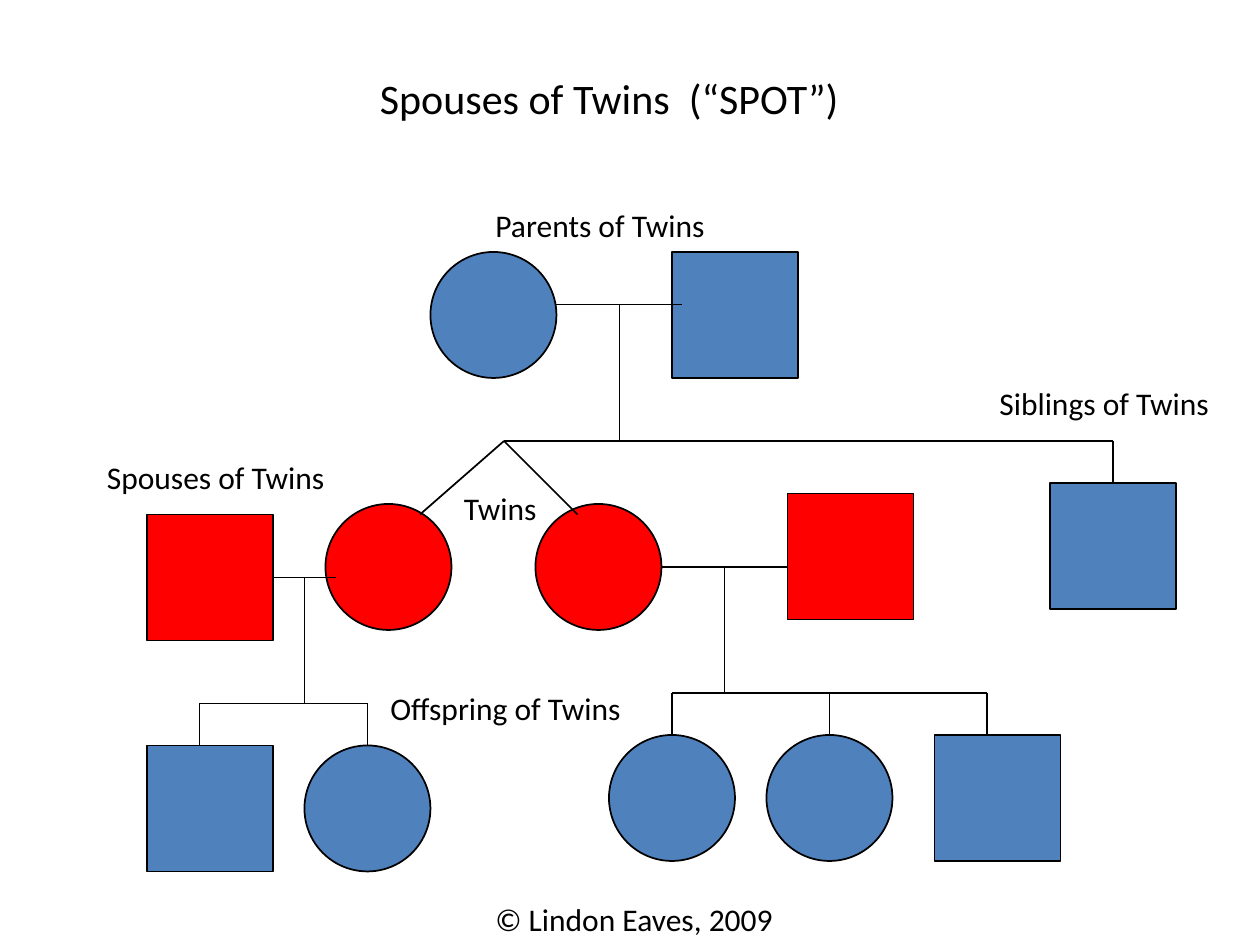
import pptx
import pptx.util
import pptx.dml.color
import pptx.enum.shapes
import pptx.enum.text
import pptx.oxml.ns
import lxml.etree

Pt = pptx.util.Pt
KIND = pptx.enum.shapes.MSO_SHAPE
SIZE = 72
BLACK, BLUE, RED = "000000", "4F81BD", "FF0000"

WOMEN = [
    (246, 144, BLUE), (186, 288, RED), (306, 288, RED),
    (174, 426, BLUE), (348, 420, BLUE), (438, 420, BLUE),
]
MEN = [
    (384, 144, BLUE), (84, 294, RED), (450, 282, RED),
    (600, 276, BLUE), (84, 426, BLUE), (534, 420, BLUE),
]
COUPLES = [(318, 390, 174), (156, 192, 330), (378, 450, 324)]
STEMS = [(354, 174, 252), (174, 330, 402), (414, 324, 396)]
BROODS = [
    (288, 636, 252, [636], 276),
    (114, 210, 402, [114, 210], 426),
    (384, 564, 396, [384, 474, 564], 420),
]
TWINS = [240, 330]
LABELS = [
    ("Twins", 258, 276, 56),
    ("Parents of Twins", 276, 114, 135),
    ("Offspring of Twins", 216, 390, 148),
    ("Siblings of Twins", 564, 216, 135),
    ("Spouses of Twins", 54, 258, 140),
    ("© Lindon Eaves, 2009", 276, 511, 175),
]


def paint(color, code):
    color.rgb = pptx.dml.color.RGBColor.from_string(code)


def add_person(slide, kind, left, top, fill):
    shape = slide.shapes.add_shape(kind, Pt(left), Pt(top), Pt(SIZE), Pt(SIZE))
    shape.shadow.inherit = False
    shape.fill.solid()
    paint(shape.fill.fore_color, fill)
    paint(shape.line.color, BLACK)
    shape.line.width = Pt(1)


def add_line(slide, x1, y1, x2, y2):
    line = slide.shapes.add_connector(
        pptx.enum.shapes.MSO_CONNECTOR.STRAIGHT, Pt(x1), Pt(y1), Pt(x2), Pt(y2))
    paint(line.line.color, BLACK)
    line.line.width = Pt(1)
    props = line.element.find(pptx.oxml.ns.qn("p:spPr"))
    lxml.etree.SubElement(props, pptx.oxml.ns.qn("a:effectLst"))


def add_brood(slide, left, right, bar, kids, foot):
    add_line(slide, left, bar, right, bar)
    for x in kids:
        add_line(slide, x, bar, x, foot)


def add_label(slide, text, left, top, width, height=29, size=18, wrap=False):
    box = slide.shapes.add_textbox(Pt(left), Pt(top), Pt(width), Pt(height))
    frame = box.text_frame
    frame.word_wrap = wrap
    frame.auto_size = pptx.enum.text.MSO_AUTO_SIZE.SHAPE_TO_FIT_TEXT
    frame.text = text
    for run in frame.paragraphs[0].runs:
        run.font.name = "Calibri"
        run.font.size = Pt(size)
        paint(run.font.color, BLACK)


def main():
    deck = pptx.Presentation()
    deck.slide_width, deck.slide_height = Pt(720), Pt(540)
    slide = deck.slides.add_slide(deck.slide_layouts[6])
    for kind, people in ((KIND.OVAL, WOMEN), (KIND.RECTANGLE, MEN)):
        for person in people:
            add_person(slide, kind, *person)
    for left, right, y in COUPLES:
        add_line(slide, left, y, right, y)
    for x, top, foot in STEMS:
        add_line(slide, x, top, x, foot)
    for brood in BROODS:
        add_brood(slide, *brood)
    for x in TWINS:
        add_line(slide, 288, 252, x, 294)
    add_label(slide, "Spouses of Twins  (“SPOT”)", 210, 38, 510, 36, 24, True)
    for label in LABELS:
        add_label(slide, *label)
    deck.save("out.pptx")


if __name__ == "__main__":
    main()
